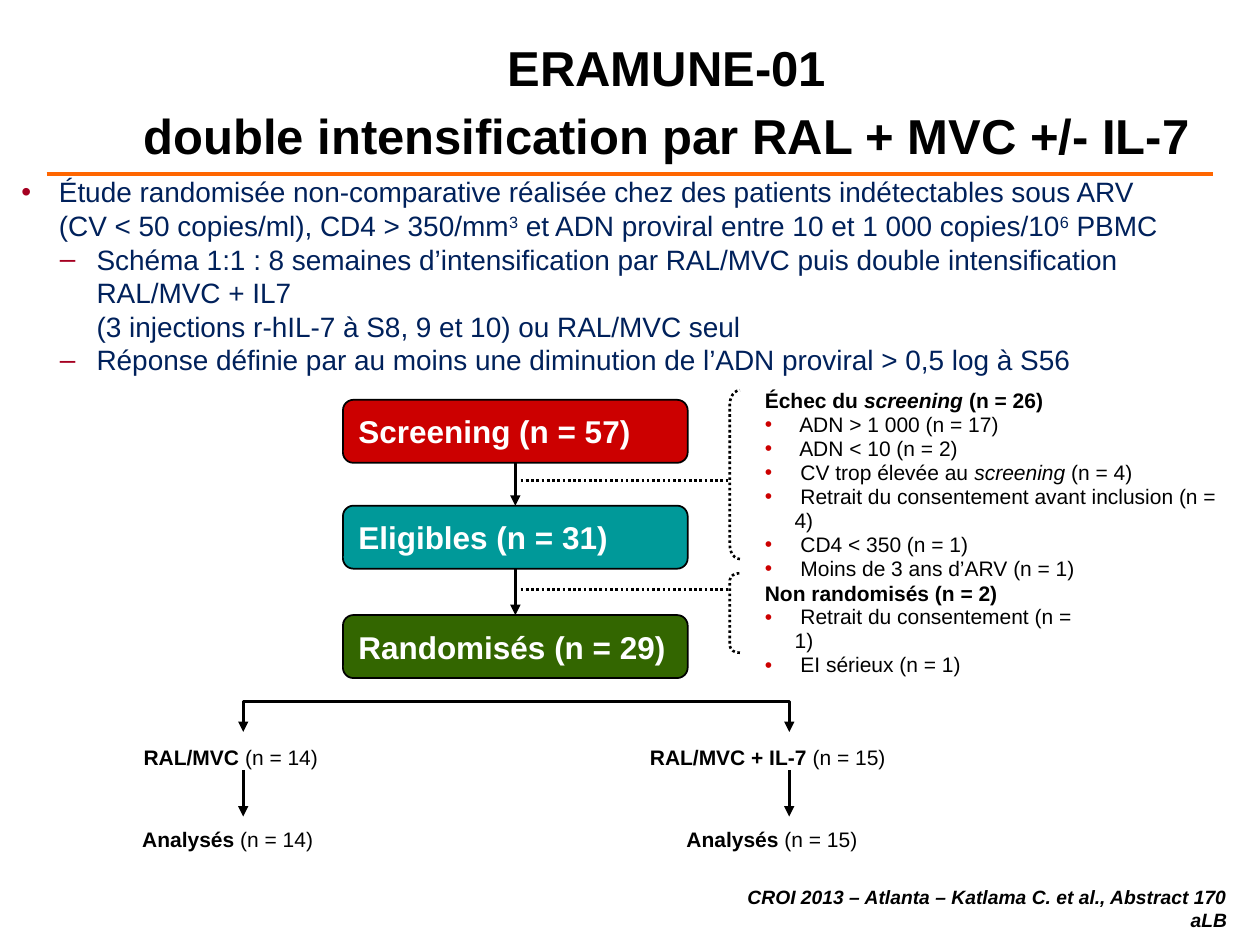
from dataclasses import dataclass

from lxml import etree
from pptx import Presentation
from pptx.dml.color import RGBColor
from pptx.enum.dml import MSO_LINE
from pptx.enum.shapes import MSO_CONNECTOR, MSO_SHAPE
from pptx.enum.text import MSO_ANCHOR, MSO_AUTO_SIZE, PP_ALIGN
from pptx.oxml.ns import qn
from pptx.util import Pt

LEFT, CENTER, RIGHT = PP_ALIGN.LEFT, PP_ALIGN.CENTER, PP_ALIGN.RIGHT
TOP, MIDDLE = MSO_ANCHOR.TOP, MSO_ANCHOR.MIDDLE
NO_AUTOFIT = MSO_AUTO_SIZE.NONE
STRAIGHT = MSO_CONNECTOR.STRAIGHT
ROUNDED, BRACKET = MSO_SHAPE.ROUNDED_RECTANGLE, MSO_SHAPE.LEFT_BRACKET
DOTTED = MSO_LINE.ROUND_DOT
BOTTOM_SIDE, TOP_SIDE = 2, 0

FONT = "Arial"
COLORS = {
    "black": "000000", "white": "FFFFFF", "navy": "00215B", "rule": "FF6600",
    "crimson": "A50021", "red": "CC0000", "teal": "009999", "green": "336600",
}


@dataclass
class Run:
    text: str
    bold: bool = False
    italic: bool = False
    superscript: bool = False


@dataclass
class Para:
    runs: list[Run]
    bullet: str = ""
    level: int = 0
    margin: float = 0
    hanging: float = 0


@dataclass
class Stage:
    text: str
    top: float
    color: str


@dataclass
class Exclusion:
    """Reasons for leaving the trial, with their bracket and dotted branch."""
    paras: list[Para]
    box: tuple
    bracket_top: float
    bracket_height: float
    curve: float
    branch_y: float


@dataclass
class Label:
    name: str
    count: str
    left: float
    top: float
    width: float


def color(name: str) -> RGBColor:
    return RGBColor.from_string(COLORS[name])


def place(shape, box: tuple) -> None:
    shape.left, shape.top, shape.width, shape.height = (Pt(v) for v in box)


def write(frame, paras: list[Para], *, size: float, ink: str = "black",
          bullet_ink: str = "red", align=LEFT, anchor=TOP, inset: tuple = (7.2, 3.6),
          line_spacing: float = 1.0, before: float = 0) -> None:
    frame.word_wrap = True
    frame.auto_size = NO_AUTOFIT
    frame.vertical_anchor = anchor
    frame.margin_left = frame.margin_right = Pt(inset[0])
    frame.margin_top = frame.margin_bottom = Pt(inset[1])
    for index, para in enumerate(paras):
        line = frame.add_paragraph() if index else frame.paragraphs[0]
        line.alignment, line.level = align, para.level
        line.line_spacing, line.space_before = line_spacing, Pt(before)
        props = line._p.get_or_add_pPr()
        props.set("marL", str(Pt(para.margin)))
        props.set("indent", str(-Pt(para.hanging)))
        if para.bullet:
            tint = etree.SubElement(props, qn("a:buClr"))
            etree.SubElement(tint, qn("a:srgbClr"), val=COLORS[bullet_ink])
            etree.SubElement(props, qn("a:buFont"), typeface=FONT)
            etree.SubElement(props, qn("a:buChar"), char=para.bullet)
        for part in para.runs:
            for row, text in enumerate(part.text.split("\n")):
                if row:
                    line.add_line_break()
                run = line.add_run()
                run.text = text
                font = run.font
                font.name, font.size = FONT, Pt(size)
                font.bold, font.italic = part.bold, part.italic
                font.color.rgb = color(ink)
                if part.superscript:
                    run._r.get_or_add_rPr().set("baseline", "30000")


def add_text(shapes, box: tuple, paras: list[Para], **text_format) -> None:
    write(shapes.add_textbox(*(Pt(v) for v in box)).text_frame, paras, **text_format)


def style_line(shape, width: float, ink: str = "black", dash=None, arrows: tuple = ()) -> None:
    shape.line.width = Pt(width)
    shape.line.color.rgb = color(ink)
    if dash:
        shape.line.dash_style = dash
    for end in arrows:
        etree.SubElement(shape.line._get_or_add_ln(), qn(f"a:{end}"), type="triangle")


def add_line(shapes, start: tuple, stop: tuple, width: float = 1.5, **line_format):
    line = shapes.add_connector(STRAIGHT, *(Pt(v) for v in start + stop))
    style_line(line, width, **line_format)
    etree.SubElement(line._element.spPr, qn("a:effectLst"))
    return line


def add_stage(shapes, stage: Stage):
    box = shapes.add_shape(ROUNDED, *(Pt(v) for v in (196, stage.top, 197, 36)))
    box.shadow.inherit = False
    box.fill.solid()
    box.fill.fore_color.rgb = color(stage.color)
    style_line(box, 1)
    write(box.text_frame, [Para([Run(stage.text, bold=True)])], size=18, ink="white", anchor=MIDDLE)
    return box


def add_exclusion(shapes, group: Exclusion) -> None:
    add_text(shapes, group.box, group.paras, size=12, line_spacing=0.95)
    bracket = shapes.add_shape(
        BRACKET, *(Pt(v) for v in (BRACKET_X, group.bracket_top, 5.8, group.bracket_height)))
    bracket.shadow.inherit = False
    bracket.fill.background()
    bracket.adjustments[0] = group.curve
    style_line(bracket, 1.5, dash=DOTTED)
    add_line(shapes, (297.5, group.branch_y), (BRACKET_X, group.branch_y), dash=DOTTED)


def reason(*runs: Run) -> Para:
    return Para(list(runs), bullet="•", margin=17, hanging=17)


BRACKET_X = 417
ARM_X = (139, 451)
TITLE = ["ERAMUNE-01 ", "double intensification par RAL + MVC +/- IL-7 "]
DESIGN = [
    Para([Run("Étude randomisée non-comparative réalisée chez des patients indétectables sous ARV\n"
              "(CV < 50 copies/ml), CD4 > 350/mm"),
          Run("3", superscript=True),
          Run(" et ADN proviral entre 10 et 1 000 copies/10"),
          Run("6", superscript=True),
          Run(" PBMC")], bullet="•", margin=21.5, hanging=21.5),
    *(Para([Run(text)], bullet="–", level=1, margin=43, hanging=21) for text in (
        "Schéma 1:1 : 8 semaines d’intensification par RAL/MVC puis double intensification "
        "RAL/MVC + IL7\n(3 injections r-hIL-7 à S8, 9 et 10) ou RAL/MVC seul",
        "Réponse définie par au moins une diminution de l’ADN proviral > 0,5 log à S56")),
]
STAGES = [
    Stage("Screening (n = 57)", 228.5, "red"),
    Stage("Eligibles (n = 31)", 289, "teal"),
    Stage("Randomisés (n = 29)", 351.5, "green"),
]
EXCLUSIONS = [
    Exclusion([
        Para([Run("Échec du ", bold=True), Run("screening", bold=True, italic=True),
              Run(" (n = 26)", bold=True)]),
        reason(Run(" ADN > 1 000 (n = 17)")),
        reason(Run(" ADN < 10 (n = 2)")),
        reason(Run(" CV trop élevée au "), Run("screening", italic=True), Run(" (n = 4)")),
        reason(Run(" Retrait du consentement avant inclusion (n = 4)")),
        reason(Run(" CD4 < 350 (n = 1)")),
        reason(Run(" Moins de 3 ans d’ARV (n = 1)")),
    ], (430, 219, 273.6, 103), 223, 96.5, 1.43, 274.5),
    Exclusion([
        Para([Run("Non randomisés (n = 2)", bold=True)]),
        reason(Run(" Retrait du consentement (n = 1)")),
        reason(Run(" EI sérieux (n = 1)")),
    ], (430, 329, 190.8, 48.2), 327.6, 45.4, 0.67, 337),
]
LABELS = [
    Label("RAL/MVC ", "(n = 14)", 75, 422, 129.6),
    Label("Analysés", " (n = 14)", 74.2, 468.7, 125.3),
    Label("RAL/MVC + IL-7 ", "(n = 15)", 364.3, 422, 172.8),
    Label("Analysés", " (n = 15)", 385.2, 468.7, 131.8),
]


def main() -> None:
    deck = Presentation()
    deck.slide_width, deck.slide_height = Pt(720), Pt(540)
    slide = deck.slides.add_slide(deck.slide_layouts[1])
    shapes = slide.shapes

    # Title, rule and study design
    title, design = shapes.title, slide.placeholders[1]
    place(title, (78.5, 20.2, 612.7, 74.9))
    write(title.text_frame,
          [Para([Run(text, bold=True)], margin=21, hanging=21) for text in TITLE],
          size=28, align=CENTER, anchor=MIDDLE, inset=(0, 0), before=5.6)
    add_line(shapes, (26.6, 99.4), (693.4, 99.4), 2.75, ink="rule")
    place(design, (12.2, 100, 687.6, 96.5))
    write(design.text_frame, DESIGN, size=16, ink="navy", bullet_ink="crimson", inset=(0, 0))

    # Patient flow
    boxes = [add_stage(shapes, stage) for stage in STAGES]
    for upper, lower in zip(boxes, boxes[1:]):
        arrow = add_line(shapes, (294.5, 0), (294.5, 0), arrows=("tailEnd",))
        arrow.begin_connect(upper, BOTTOM_SIDE)
        arrow.end_connect(lower, TOP_SIDE)
    for group in EXCLUSIONS:
        add_exclusion(shapes, group)

    # Split into two arms
    left, right = ARM_X
    fork = shapes.build_freeform(Pt(left), Pt(418.3))
    fork.add_line_segments([(Pt(x), Pt(y)) for x, y in
                            ((left, 401), (right, 401), (right, 418.3))], close=False)
    split = fork.convert_to_shape()
    split.shadow.inherit = False
    split.fill.background()
    style_line(split, 1.5, arrows=("headEnd", "tailEnd"))
    for x in ARM_X:
        add_line(shapes, (x, 440), (x, 466.6), arrows=("tailEnd",))
    for label in LABELS:
        add_text(shapes, (label.left, label.top, label.width, 21.6),
                 [Para([Run(label.name, bold=True), Run(label.count)])], size=12)

    # Reference
    add_text(shapes, (404.6, 512.6, 296.6, 13),
             [Para([Run("CROI 2013 – Atlanta – Katlama C. et al., Abstract 170 aLB",
                        bold=True, italic=True)])],
             size=11, align=RIGHT, anchor=MIDDLE, inset=(0, 0))

    deck.save("out.pptx")


if __name__ == "__main__":
    main()
